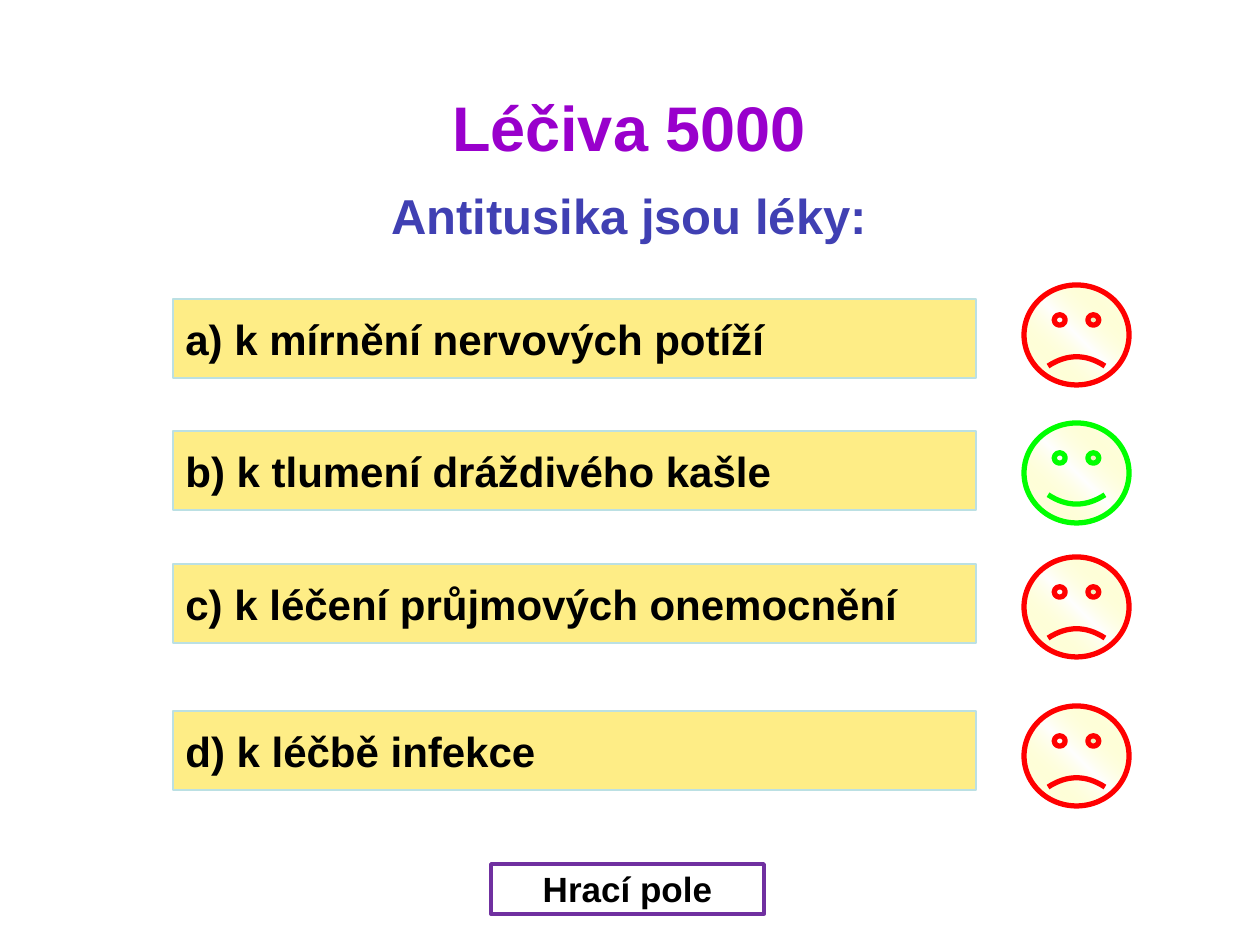
from dataclasses import dataclass

from lxml.etree import SubElement
from pptx import Presentation
from pptx.dml.color import RGBColor
from pptx.enum.shapes import MSO_SHAPE as Preset
from pptx.enum.text import MSO_ANCHOR as Anchor, PP_ALIGN as Align
from pptx.oxml.ns import qn
from pptx.util import Emu, Pt

EMU_PER_INCH = 914400
PX_PER_INCH = 126
BLANK_LAYOUT = 6


@dataclass(frozen=True)
class Theme:
    font: str = "Arial"
    title: str = "9900CC"
    question: str = "4040B3"
    text: str = "000000"
    answer_fill: str = "FEED86"
    answer_line: str = "BBE0E3"
    button_fill: str = "FFFFFF"
    button_line: str = "7030A0"
    right: str = "00FF00"
    wrong: str = "FF0000"
    face_edge: str = "FFFFFF"
    face_middle: str = "FFFF66"
    title_size: int = 36
    question_size: int = 28
    answer_size: int = 24
    button_size: int = 20


THEME = Theme()

# text, box top, face top, is it the right answer
ANSWERS = [
    ("a) k mírnění nervových potíží", 299, 285, False),
    ("b) k tlumení dráždivého kašle", 431, 423, True),
    ("c) k léčení průjmových onemocnění", 564, 557, False),
    ("d) k léčbě infekce", 711, 706, False),
]


def px(length):
    return Emu(round(length * EMU_PER_INCH / PX_PER_INCH))


def color(code):
    return RGBColor.from_string(code)


def add_run(paragraph, text, size, code):
    run = paragraph.add_run()
    run.text = text
    font = run.font
    font.name, font.size, font.bold = THEME.font, Pt(size), True
    font.color.rgb = color(code)


def add_preset(slide, preset, box, line, line_width):
    shape = slide.shapes.add_shape(preset, *map(px, box))
    shape.shadow.inherit = False
    shape.line.color.rgb = color(line)
    shape.line.width = Pt(line_width)
    return shape


def add_button(slide, text, box, fill, line, line_width, size, align):
    shape = add_preset(slide, Preset.ACTION_BUTTON_CUSTOM, box, line, line_width)
    shape.fill.solid()
    shape.fill.fore_color.rgb = color(fill)
    frame = shape.text_frame
    frame.word_wrap = True
    frame.vertical_anchor = Anchor.MIDDLE
    paragraph = frame.paragraphs[0]
    paragraph.alignment = align
    add_run(paragraph, text, size, THEME.text)


def set_face_gradient(shape):
    """Fill diagonally, with a fully transparent middle stop."""
    shape.fill.gradient()
    shape.fill.gradient_angle = 45
    stops = shape._element.spPr.find(qn("a:gradFill")).find(qn("a:gsLst"))
    for stop in list(stops):
        stops.remove(stop)
    for position, code in ((0, THEME.face_edge), (50, THEME.face_middle),
                           (100, THEME.face_edge)):
        stop = SubElement(stops, qn("a:gs"), pos=str(position * 1000))
        stop_color = SubElement(stop, qn("a:srgbClr"), val=code)
        if code == THEME.face_middle:
            SubElement(stop_color, qn("a:alpha"), val="0")


def add_face(slide, top, is_right):
    line = THEME.right if is_right else THEME.wrong
    face = add_preset(slide, Preset.SMILEY_FACE, (1024, top, 105, 100), line, 3)
    face.adjustments[0] = 0.05 if is_right else -0.05
    set_face_gradient(face)


def add_heading(slide, title, question):
    frame = slide.shapes.add_textbox(*map(px, (49, 76, 1160, 94))).text_frame
    frame.word_wrap = True
    frame.margin_top = px(13)
    first = frame.paragraphs[0]
    second = frame.add_paragraph()
    second.space_before = Pt(12)
    first.alignment = second.alignment = Align.CENTER
    add_run(first, title, THEME.title_size, THEME.title)
    add_run(second, question, THEME.question_size, THEME.question)


def main():
    presentation = Presentation()
    presentation.slide_width, presentation.slide_height = px(1260), px(945)
    slide = presentation.slides.add_slide(presentation.slide_layouts[BLANK_LAYOUT])

    add_heading(slide, "Léčiva 5000", "Antitusika jsou léky:")
    for text, box_top, face_top, is_right in ANSWERS:
        add_button(slide, text, (173, box_top, 803, 79), THEME.answer_fill,
                   THEME.answer_line, 1, THEME.answer_size, Align.LEFT)
        add_face(slide, face_top, is_right)
    add_button(slide, "Hrací pole", (491, 864, 273, 50), THEME.button_fill,
               THEME.button_line, 2, THEME.button_size, Align.CENTER)

    presentation.save("out.pptx")


if __name__ == "__main__":
    main()
